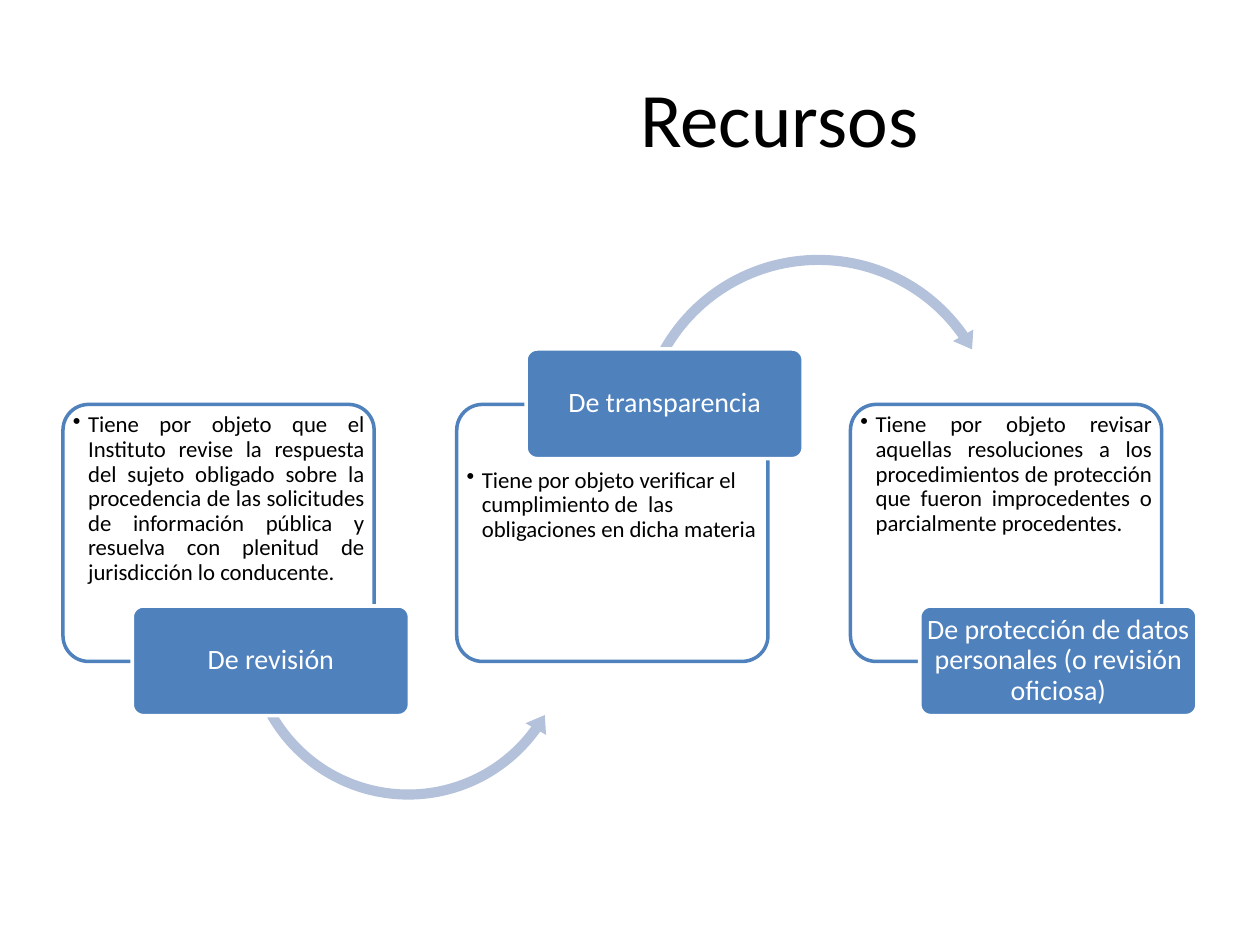
from lxml.etree import SubElement
from pptx import Presentation
from pptx.dml.color import RGBColor
from pptx.enum.shapes import MSO_SHAPE
from pptx.enum.text import MSO_ANCHOR, PP_ALIGN
from pptx.oxml.ns import qn
from pptx.util import Inches, Pt

BLUE = RGBColor(0x4F, 0x81, 0xBD)
PALE_BLUE = RGBColor(0xB3, 0xC1, 0xDB)
WHITE = RGBColor(0xFF, 0xFF, 0xFF)
BLACK = RGBColor(0x00, 0x00, 0x00)


def add_box(s, kind, at, fill, line=None, adj=()):
    sp = s.shapes.add_shape(kind, *[Inches(v) for v in at])
    sp.shadow.inherit = False
    sp.fill.solid()
    sp.fill.fore_color.rgb = fill
    if line is None:
        sp.line.fill.background()
    else:
        sp.line.color.rgb = line
        sp.line.width = Pt(2)
    for i, value in enumerate(adj):
        sp.adjustments[i] = value
    return sp


def write(sp, text, size, color, align=PP_ALIGN.CENTER, anchor=MSO_ANCHOR.MIDDLE,
          insets=None, spacing=None, bullet=False):
    tf = sp.text_frame
    tf.word_wrap = True
    tf.vertical_anchor = anchor
    if insets:
        tf.margin_left, tf.margin_top, tf.margin_right, tf.margin_bottom = [
            Inches(v) for v in insets]
    p = tf.paragraphs[0]
    p.alignment = align
    if spacing:
        p.line_spacing = spacing
    if bullet:
        pPr = p._p.get_or_add_pPr()
        pPr.set("marL", str(Inches(0.12)))
        pPr.set("indent", str(-Inches(0.12)))
        SubElement(pPr, qn("a:buChar")).set("char", "•")
    r = p.add_run()
    r.text = text
    r.font.name = "Calibri"
    r.font.size = Pt(size)
    r.font.color.rgb = color


prs = Presentation()
prs.slide_width, prs.slide_height = Inches(10), Inches(7.5)
s = prs.slides.add_slide(prs.slide_layouts[5])

# Title
title = s.shapes.title
title.left, title.top, title.width, title.height = [
    Inches(v) for v in (2.87, 0.3, 6.63, 1.25)]
write(title, "Recursos", 44, BLACK)

# Steps: label, label top, description, description alignment, top inset
steps = [
    ("De revisión", 4.81,
     "Tiene por objeto que el Instituto revise la respuesta del sujeto obligado "
     "sobre la procedencia de las solicitudes de información pública y resuelva "
     "con plenitud de jurisdicción lo conducente.", PP_ALIGN.JUSTIFY, 0.01),
    ("De transparencia", 2.77,
     "Tiene por objeto verificar el cumplimiento de  las obligaciones en dicha "
     "materia", PP_ALIGN.LEFT, 0.45),
    ("De protección de datos personales (o revisión oficiosa)", 4.81,
     "Tiene por objeto revisar aquellas resoluciones a los procedimientos de "
     "protección que fueron improcedentes o parcialmente procedentes.",
     PP_ALIGN.JUSTIFY, 0.01),
]
# Curved arrows leaving the first two steps
arrows = [
    (MSO_SHAPE.LEFT_CIRCULAR_ARROW, (1.9, 3.72, 2.68, 2.68),
     (0.03, 3.64, 21.39, 90.25, 0.035)),
    (MSO_SHAPE.CIRCULAR_ARROW, (5, 1.97, 2.99, 2.99),
     (0.027, 3.23, 195.02, 125.76, 0.031)),
]

for i, (label, label_top, description, align, inset_top) in enumerate(steps):
    left = 0.5 + i * 3.125
    panel = add_box(s, MSO_SHAPE.ROUNDED_RECTANGLE, (left, 3.21, 2.47, 2.04),
                    WHITE, BLUE, [0.1])
    write(panel, description, 13, BLACK, align=align, anchor=MSO_ANCHOR.TOP,
          insets=(0.02, inset_top, 0.02, 0), spacing=0.9, bullet=True)
    if i < len(arrows):
        kind, at, adj = arrows[i]
        add_box(s, kind, at, PALE_BLUE, adj=adj)
    tag = add_box(s, MSO_SHAPE.ROUNDED_RECTANGLE, (left + 0.55, label_top, 2.2, 0.87),
                  BLUE, WHITE, [0.1])
    write(tag, label, 16, WHITE, insets=(0.03, 0.02, 0.03, 0.02), spacing=0.9)

prs.save("out.pptx")
